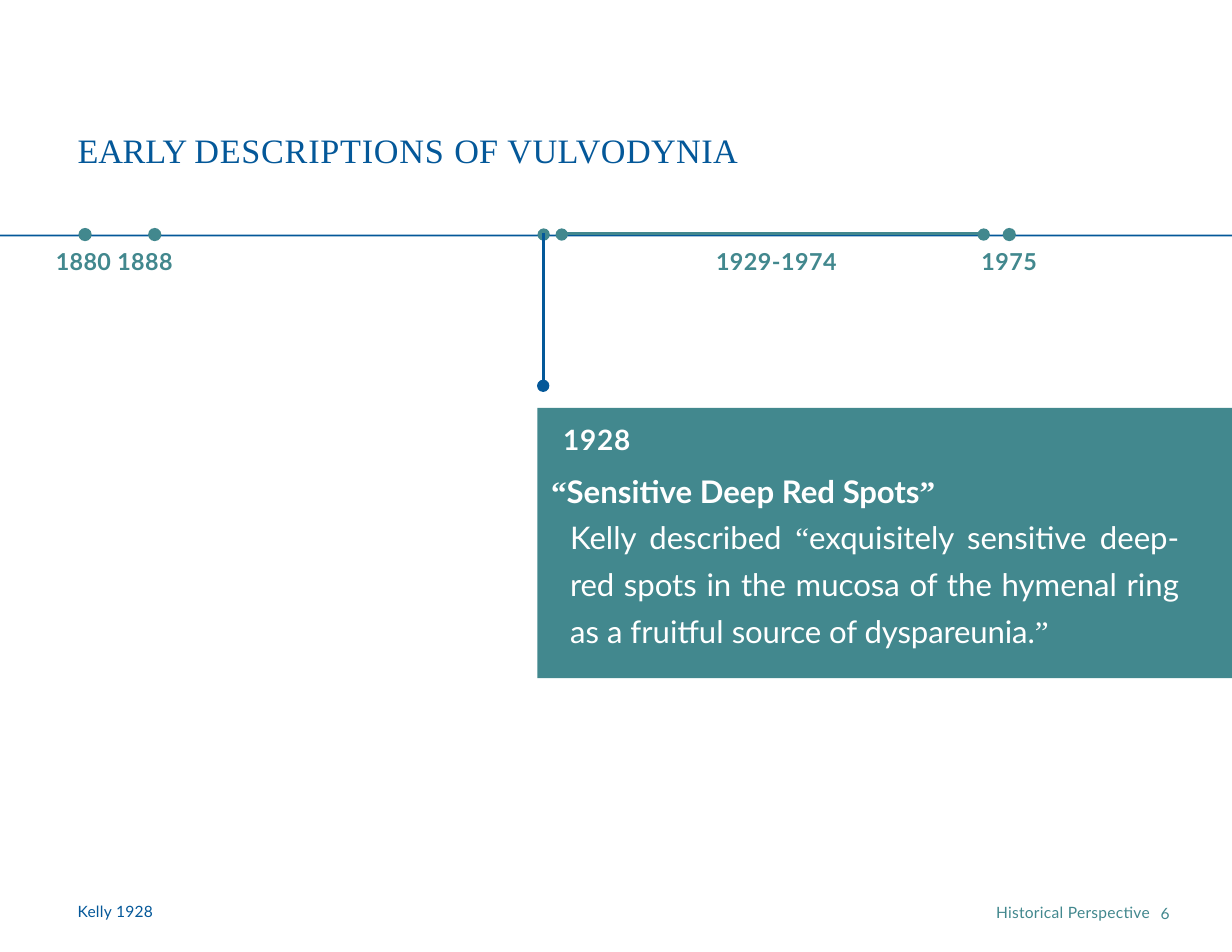
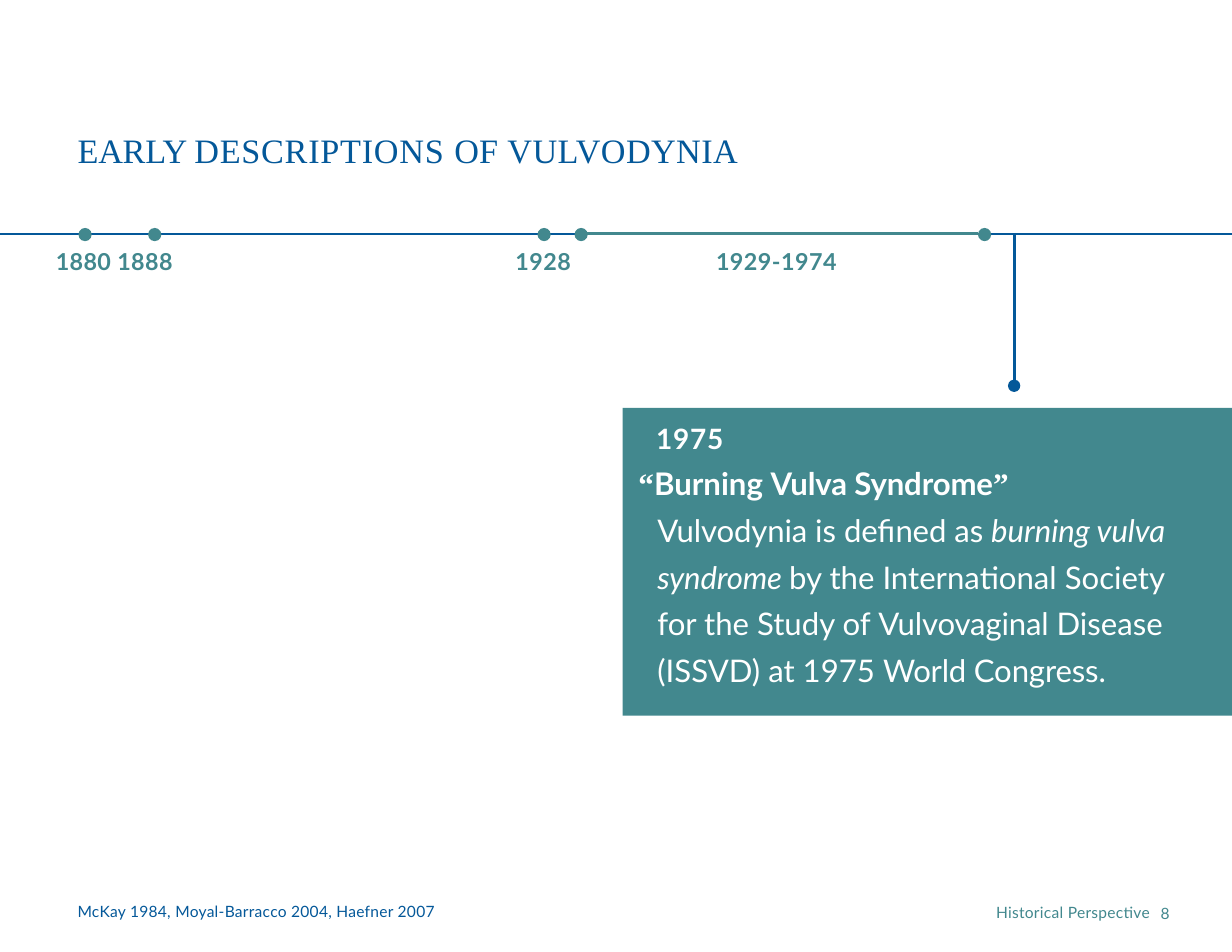
from dataclasses import dataclass
from typing import NamedTuple

from lxml import etree
from pptx import Presentation
from pptx.dml.color import RGBColor
from pptx.enum.shapes import MSO_CONNECTOR, MSO_SHAPE
from pptx.enum.text import MSO_ANCHOR, MSO_AUTO_SIZE, PP_ALIGN
from pptx.oxml.ns import qn
from pptx.util import Cm, Pt

BLUE = RGBColor(0x04, 0x58, 0x99)
TEAL = RGBColor(0x42, 0x88, 0x8E)
WHITE = RGBColor(0xFF, 0xFF, 0xFF)
SANS = "Lato"
SERIF = "Times New Roman"
LEFT, RIGHT, JUSTIFY = PP_ALIGN.LEFT, PP_ALIGN.RIGHT, PP_ALIGN.JUSTIFY
TOP = MSO_ANCHOR.TOP
NO_AUTOFIT = MSO_AUTO_SIZE.NONE
OVAL, RECTANGLE = MSO_SHAPE.OVAL, MSO_SHAPE.RECTANGLE
STRAIGHT = MSO_CONNECTOR.STRAIGHT

# Shared measures in centimetres
PAGE_WIDTH, PAGE_HEIGHT = 27.94, 21.59
MARGIN_LEFT = 1.73
DOT_Y = 5.32
RANGE_Y = 5.3
DROP_TOP, DROP_END = 5.28, 8.75
LABEL_TOP = 5.61
CALLOUT_TOP = 9.25
SMALL_DOT, LARGE_DOT = 0.28, 0.3


class Span(NamedTuple):
    text: str
    spacing: float = 0
    font: str = SANS
    italic: bool = False


class Style(NamedTuple):
    size: float
    color: RGBColor
    bold: bool = False


class Area(NamedTuple):
    left: float
    top: float
    width: float
    height: float


class Dot(NamedTuple):
    x: float
    size: float = LARGE_DOT


class Label(NamedTuple):
    left: float
    width: float
    spans: list[Span]


@dataclass
class Callout:
    left: float
    height: float
    text_area: Area
    year: str
    year_indent: float
    heading_gap: float
    heading: list[Span]
    body: list[Span]
    body_align: PP_ALIGN


@dataclass
class TimelinePage:
    number: str
    source: str
    bar_top: float
    dots: list[Dot]
    labels: list[Label]
    range_start: float
    range_end: float
    drop_x: float
    callout: Callout


TITLE_STYLE = Style(22, BLUE)
LABEL_STYLE = Style(15, TEAL, True)
YEAR_STYLE = Style(18, WHITE, True)
HEADING_STYLE = Style(20, WHITE, True)
BODY_STYLE = Style(20, WHITE)
FOOTER_STYLE = Style(10, TEAL)
SOURCE_STYLE = Style(10, BLUE)

TITLE = [
    Span("EARLY ", -0.1, SERIF),
    Span("DESCRIPTIONS ", 0.5, SERIF),
    Span("OF ", 0.2, SERIF),
    Span("VULVODYNIA", 0.3, SERIF),
]
OPEN_QUOTE = Span("“", 0, SERIF)
CLOSE_QUOTE = Span("”", -0.1, SERIF)

# Timeline parts that stay the same on every page
FIRST_DOTS = [Dot(1.93), Dot(3.51)]
FIRST_YEARS = Label(1.24, 3.2, [Span("1880 ", 0.2), Span("1888", 0.3)])
RANGE_YEARS = Label(16.21, 3.1, [Span("1929-1974", 0.3)])

PAGES = [
    TimelinePage(
        number="6",
        source="Kelly 1928",
        bar_top=5.32,
        dots=[Dot(12.33, SMALL_DOT), Dot(12.74, SMALL_DOT),
              Dot(22.31, SMALL_DOT), Dot(22.89)],
        labels=[Label(22.23, 1.6, [Span("1975", 0.3)])],
        range_start=12.85,
        range_end=22.25,
        drop_x=12.32,
        callout=Callout(
            left=12.19,
            height=6.13,
            text_area=Area(12.47, 9.58, 14.28, 5.23),
            year="1928",
            year_indent=0.3,
            heading_gap=10.4,
            heading=[OPEN_QUOTE, Span("Sensitive Deep Red "),
                     Span("Spots", -0.1), CLOSE_QUOTE],
            body=[
                Span("Kelly described "),
                OPEN_QUOTE,
                Span("exquisitely sensitive deep- "),
                Span("red ", -0.1),
                Span("spots in the mucosa of the hymenal ring as a fruitful "),
                Span("source ", -0.1),
                Span("of "),
                Span("dyspareunia.", -0.1),
                CLOSE_QUOTE,
            ],
            body_align=JUSTIFY,
        ),
    ),
    TimelinePage(
        number="8",
        source="McKay 1984, Moyal-Barracco 2004, Haefner 2007",
        bar_top=5.29,
        dots=[Dot(12.34), Dot(13.18), Dot(22.33)],
        labels=[Label(11.66, 1.6, [Span("1928", 0.3)])],
        range_start=13.28,
        range_end=22.17,
        drop_x=23,
        callout=Callout(
            left=14.12,
            height=6.98,
            text_area=Area(14.45, 9.55, 12.62, 6.15),
            year="1975",
            year_indent=0.43,
            heading_gap=6.5,
            heading=[OPEN_QUOTE, Span("Burning "),
                     Span("Vulva Syndrome", -0.1), CLOSE_QUOTE],
            body=[
                Span("Vulvodynia ", -0.1),
                Span("is "),
                Span("defined ", -0.1),
                Span("as "),
                Span("burning vulva ", italic=True),
                Span("syndrome ", -0.1, italic=True),
                Span("by the International Society for the Study of "),
                Span("Vulvovaginal ", -0.1),
                Span("Disease (ISSVD) at 1975 "),
                Span("World ", -0.2),
                Span("Congress.", -0.1),
            ],
            body_align=LEFT,
        ),
    ),
]


def place(shape, area: Area) -> None:
    shape.left, shape.top, shape.width, shape.height = map(Cm, area)


def prepare_frame(frame, top_inset: float = 0) -> None:
    frame.word_wrap = True
    frame.auto_size = NO_AUTOFIT
    frame.vertical_anchor = TOP
    frame.margin_left = frame.margin_right = frame.margin_bottom = 0
    frame.margin_top = Cm(top_inset)


def fill_paragraph(para, spans: list[Span], style: Style,
                   align: PP_ALIGN = LEFT, indent: float = 0.03) -> None:
    para.alignment = align
    properties = para._p.get_or_add_pPr()
    properties.set("marL", str(Cm(indent)))
    properties.set("indent", "0")
    for span in spans:
        run = para.add_run()
        run.text = span.text
        run.font.name = span.font
        run.font.size = Pt(style.size)
        run.font.bold = style.bold
        run.font.italic = span.italic
        run.font.color.rgb = style.color
        run._r.get_or_add_rPr().set("spc", str(round(span.spacing * 100)))


def add_text(slide, area: Area, spans: list[Span], style: Style,
             align: PP_ALIGN = LEFT, indent: float = 0.03):
    box = slide.shapes.add_textbox(*map(Cm, area))
    prepare_frame(box.text_frame)
    para = box.text_frame.paragraphs[0]
    fill_paragraph(para, spans, style, align, indent)
    return box.text_frame


def add_block(slide, preset: MSO_SHAPE, area: Area, color: RGBColor) -> None:
    shape = slide.shapes.add_shape(preset, *map(Cm, area))
    shape.shadow.inherit = False
    shape.fill.solid()
    shape.fill.fore_color.rgb = color
    shape.line.fill.background()


def add_dot(slide, dot: Dot, y: float, color: RGBColor) -> None:
    area = Area(dot.x - dot.size / 2, y - dot.size / 2, dot.size, dot.size)
    add_block(slide, OVAL, area, color)


def add_line(slide, x1: float, y1: float, x2: float, y2: float,
             color: RGBColor) -> None:
    line = slide.shapes.add_connector(STRAIGHT, *map(Cm, (x1, y1, x2, y2)))
    line.line.color.rgb = color
    line.line.width = Pt(2)
    etree.SubElement(line._element.spPr, qn("a:effectLst"))


def add_title(slide) -> None:
    title = slide.shapes.title
    place(title, Area(MARGIN_LEFT, 2.21, 24.46, 2.72))
    prepare_frame(title.text_frame, top_inset=0.72)
    fill_paragraph(title.text_frame.paragraphs[0], TITLE, TITLE_STYLE)


def add_timeline(slide, page: TimelinePage) -> None:
    add_block(slide, RECTANGLE, Area(0, page.bar_top, PAGE_WIDTH, 0.04), BLUE)
    add_line(slide, page.range_start, RANGE_Y, page.range_end, RANGE_Y, TEAL)
    for dot in FIRST_DOTS + page.dots:
        add_dot(slide, dot, DOT_Y, TEAL)
    for label in [FIRST_YEARS, RANGE_YEARS] + page.labels:
        area = Area(label.left, LABEL_TOP, label.width, 0.71)
        add_text(slide, area, label.spans, LABEL_STYLE)
    # Drop line to the callout
    add_line(slide, page.drop_x, DROP_TOP, page.drop_x, DROP_END, BLUE)
    add_dot(slide, Dot(page.drop_x, SMALL_DOT), DROP_END, BLUE)


def add_callout(slide, callout: Callout) -> None:
    panel = Area(callout.left, CALLOUT_TOP,
                 PAGE_WIDTH - callout.left, callout.height)
    add_block(slide, RECTANGLE, panel, TEAL)
    frame = add_text(slide, callout.text_area, [Span(callout.year, 0.5)],
                     YEAR_STYLE, indent=callout.year_indent)
    heading = frame.add_paragraph()
    fill_paragraph(heading, callout.heading, HEADING_STYLE)
    heading.space_before = Pt(callout.heading_gap)
    body = frame.add_paragraph()
    fill_paragraph(body, callout.body, BODY_STYLE, callout.body_align, 0.46)
    body.line_spacing = 1.25


def add_footer(slide, page: TimelinePage) -> None:
    number = add_text(slide, Area(26.24, 20.47, 0.64, 0.43),
                      [Span(page.number)], FOOTER_STYLE, indent=0.08)
    number.paragraphs[0].line_spacing = Pt(13.1)
    section = add_text(slide, Area(20.14, 20.47, 5.94, 0.43),
                       [Span("Historical Perspective", 0.2)],
                       FOOTER_STYLE, RIGHT)
    section.paragraphs[0].line_spacing = Pt(12.1)
    add_text(slide, Area(MARGIN_LEFT, 20.45, 9, 0.43),
             [Span(page.source, 0.2)], SOURCE_STYLE)


def main() -> None:
    deck = Presentation()
    deck.slide_width, deck.slide_height = Cm(PAGE_WIDTH), Cm(PAGE_HEIGHT)
    title_only = deck.slide_layouts[5]
    for page in PAGES:
        slide = deck.slides.add_slide(title_only)
        add_title(slide)
        add_timeline(slide, page)
        add_callout(slide, page.callout)
        add_footer(slide, page)
    deck.save("out.pptx")


if __name__ == "__main__":
    main()
